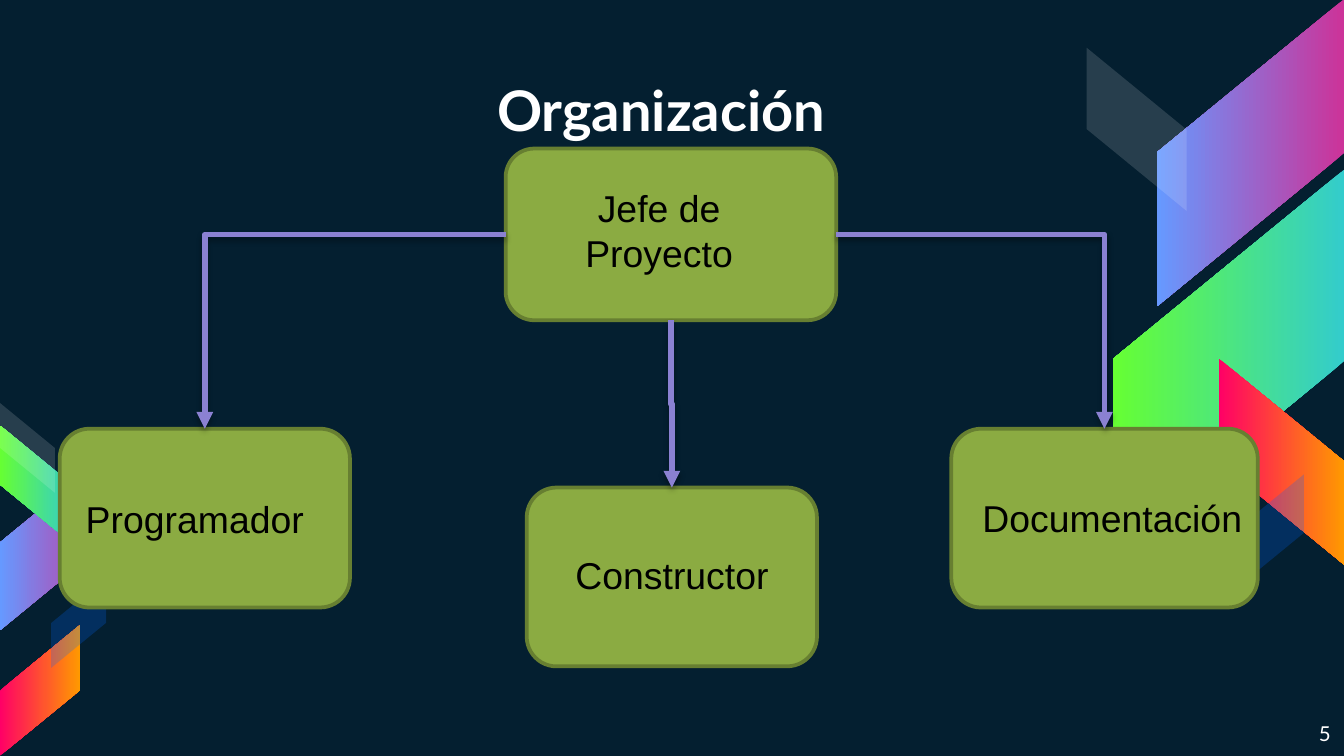
import pptx
import pptx.dml.color
import pptx.enum.shapes
import pptx.enum.text
import pptx.oxml
import pptx.oxml.ns
import pptx.util
from lxml import etree

Pt = pptx.util.Pt
SHAPES = pptx.enum.shapes.MSO_SHAPE
ALIGN = pptx.enum.text.PP_ALIGN
ANCHOR = pptx.enum.text.MSO_ANCHOR
qn = pptx.oxml.ns.qn

THEME = {
    "background": "041F30", "light": "FFFFFF", "dark": "000000",
    "box": "8BAB42", "box_line": "677F31", "arrow": "8B81D2",
    "heading_font": "Lato", "body_font": "Arial",
    "title_size": 30, "label_size": 20, "number_size": 11,
    "box_width": 2, "arrow_width": 3,
}

# Ribbon fills: two gradient colours, or one colour with its opacity in percent
VIOLET, GREEN = ("CC3399", "6699FF"), ("33CCCC", "66FF33")
FIRE, MIST, NAVY = ("FF0066", "FF9900"), ("FFFFFF", 14), ("0066FF", 23)

# Ribbons: left, top, width, height, rotation, mirrored, fill
RIBBONS = [
    (587.9, 31.7, 164.4, 100, 90, True, VIOLET),
    (556.2, 131, 204, 123.8, 90, True, GREEN),
    (631.4, 213.8, 110.4, 67.2, 270, False, FIRE),
    (565.2, 42.5, 87.4, 53.5, 270, False, MIST),
    (648.7, 266.4, 62.1, 37.6, 270, True, NAVY),
    (-18.3, 261.9, 94, 57.4, 90, True, VIOLET),
    (-12.2, 240.3, 63.4, 38.9, 90, False, GREEN),
    (-13.7, 348.5, 70, 42.9, 270, True, FIRE),
    (-9.4, 225.2, 48.2, 29.5, 270, False, MIST),
    (18, 319, 48.2, 29.5, 270, True, NAVY),
]

# Roles: text, box frame, label frame; the first one leads the others
ROLES = [
    ("Jefe de Proyecto", (270.9, 79.6, 177.1, 92), (279.7, 95.8, 146.9, 55.4)),
    ("Programador", (32, 229.7, 155.5, 95.8), (37.4, 262.1, 134, 31.7)),
    ("Constructor", (282.2, 261.2, 155.5, 95.8), (296.6, 292.3, 127, 31.7)),
    ("Documentación", (509.6, 229.7, 164.2, 95.8), (517.4, 261.7, 157, 31.7)),
]
# Side of the leader's box that each arrow leaves from
SIDES = [1, 2, 3]


def color(name):
    return pptx.dml.color.RGBColor.from_string(THEME.get(name, name))


def add_text(slide, text, frame, size, font="body_font", fill="dark", bold=False,
             align=ALIGN.CENTER, anchor=ANCHOR.TOP, inset=3.6):
    text_frame = slide.shapes.add_textbox(*map(Pt, frame)).text_frame
    text_frame.word_wrap = True
    text_frame.vertical_anchor = anchor
    text_frame.margin_left = text_frame.margin_right = Pt(7.2)
    text_frame.margin_top = text_frame.margin_bottom = Pt(inset)
    paragraph = text_frame.paragraphs[0]
    paragraph.alignment = align
    run = paragraph.add_run()
    run.text = text
    run.font.size = Pt(THEME[size])
    run.font.name = THEME[font]
    run.font.bold = bold
    run.font.color.rgb = color(fill)


def add_ribbon(slide, left, top, width, height, rotation, mirrored, fill):
    shape = slide.shapes.add_shape(SHAPES.PARALLELOGRAM, *map(Pt, (left, top, width, height)))
    shape.adjustments[0] = 0.819
    shape.rotation = rotation
    shape.shadow.inherit = False
    shape.line.fill.background()
    if mirrored:
        shape._element.spPr.find(qn("a:xfrm")).set("flipH", "1")
    first, second = fill
    if isinstance(second, str):
        shape.fill.gradient()
        shape.fill.gradient_angle = 270
        for stop, value in zip(shape.fill.gradient_stops, fill):
            stop.color.rgb = color(value)
    else:
        shape.fill.solid()
        shape.fill.fore_color.rgb = color(first)
        solid = shape._element.spPr.find(qn("a:solidFill"))
        etree.SubElement(solid[0], qn("a:alpha"), val=str(second * 1000))


def add_box(slide, kind, frame):
    shape = slide.shapes.add_shape(kind, *map(Pt, frame))
    shape.shadow.inherit = False
    shape.fill.solid()
    shape.fill.fore_color.rgb = color("box")
    shape.line.color.rgb = color("box_line")
    shape.line.width = Pt(THEME["box_width"])
    return shape


def add_arrow(slide, leader, member, side):
    connector = slide.shapes.add_connector(
        pptx.enum.shapes.MSO_CONNECTOR.ELBOW, 0, 0, 0, 0)
    connector.begin_connect(leader, side)
    connector.end_connect(member, 0)
    connector.line.color.rgb = color("arrow")
    connector.line.width = Pt(THEME["arrow_width"])
    properties = connector._element.spPr
    if side == 2:
        # A downward elbow is a sideways one turned about its centre
        run, drop = connector.width, connector.height
        connector.left += (run - drop) // 2
        connector.top += (drop - run) // 2
        connector.width, connector.height = drop, run
        transform = properties.find(qn("a:xfrm"))
        transform.set("rot", "16200000")
        transform.set("flipH", "1")
    else:
        properties.find(qn("a:prstGeom")).set("prst", "bentConnector2")
    etree.SubElement(properties.find(qn("a:ln")), qn("a:tailEnd"), type="triangle")
    effects = etree.SubElement(properties, qn("a:effectLst"))
    shadow = etree.SubElement(effects, qn("a:outerShdw"), blurRad=str(Pt(3.1)),
                              dist=str(Pt(1.8)), dir="5400000", rotWithShape="0")
    shade = etree.SubElement(shadow, qn("a:srgbClr"), val=THEME["dark"])
    etree.SubElement(shade, qn("a:alpha"), val="35000")


def main():
    presentation = pptx.Presentation()
    presentation.slide_width, presentation.slide_height = Pt(720), Pt(405)
    slide = presentation.slides.add_slide(presentation.slide_layouts[6])
    slide.background.fill.solid()
    slide.background.fill.fore_color.rgb = color("background")

    # Decoration
    for ribbon in RIBBONS:
        add_ribbon(slide, *ribbon)

    # Title and slide number
    add_text(slide, "Organización", (259.2, 19.4, 201.6, 64.1), "title_size",
             font="heading_font", fill="light", bold=True, align=ALIGN.LEFT,
             anchor=ANCHOR.BOTTOM, inset=7.2)
    add_text(slide, "5", (673.9, 379.5, 46.1, 25.5), "number_size",
             font="heading_font", fill="light", align=ALIGN.RIGHT, inset=7.2)

    # Organisation chart
    boxes = []
    for text, box_frame, label_frame in ROLES:
        kind = SHAPES.FLOWCHART_ALTERNATE_PROCESS if boxes else SHAPES.ROUNDED_RECTANGLE
        boxes.append(add_box(slide, kind, box_frame))
        add_text(slide, text, label_frame, "label_size")
    leader, *members = boxes
    for member, side in zip(members, SIDES):
        add_arrow(slide, leader, member, side)

    presentation.save("out.pptx")


if __name__ == "__main__":
    main()
